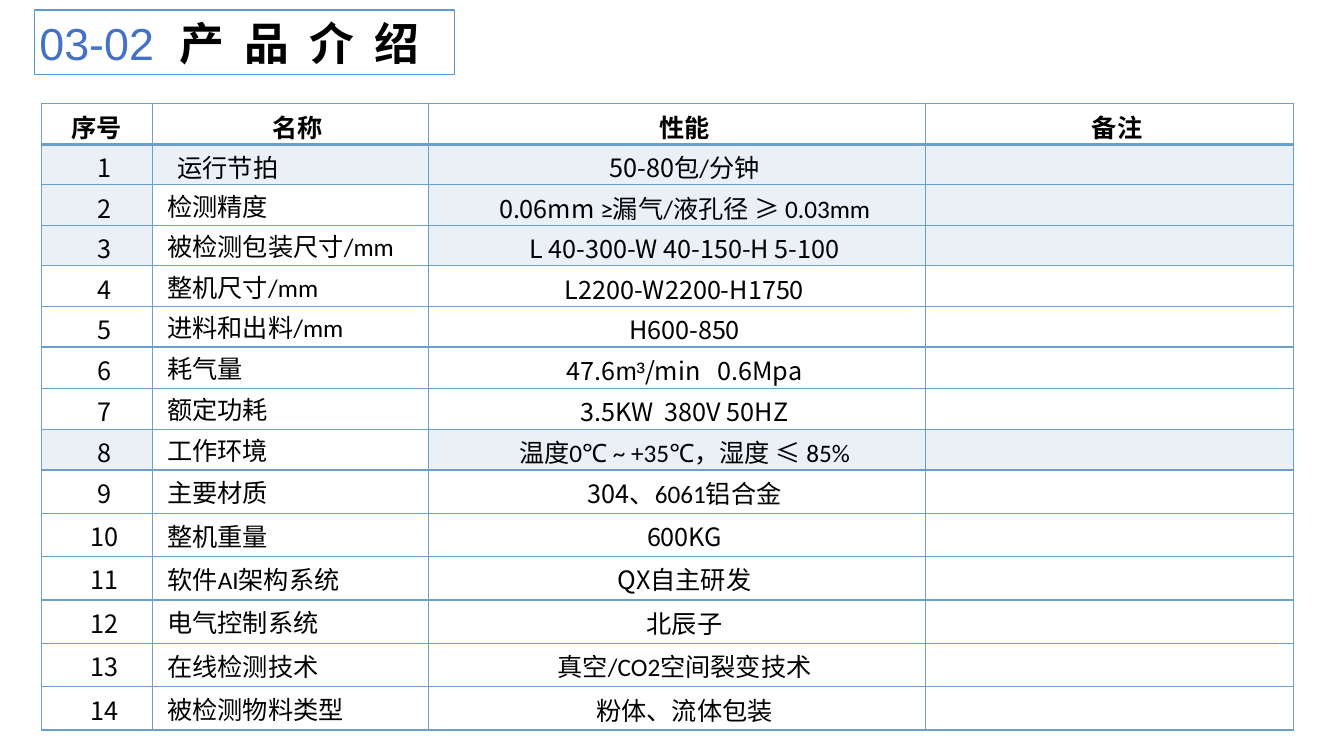
"""Build the product introduction slide with its specification table."""
from lxml import etree
from pptx import Presentation
from pptx import util as u
from pptx.dml import color
from pptx.enum import text
from pptx.oxml import ns

NOTO, CALIBRI, ARIAL = "Noto Sans CJK SC", "Calibri", "Arial"
HEADERS = ["序号", "名称", "性能", "备注"]
PRODUCT = [
    ("运行节拍", [("50-80", NOTO), ("包/分钟", CALIBRI)]),
    ("检测精度", [("0.06mm ", NOTO), ("≥漏气/液孔径 ≥ 0.03mm", CALIBRI)]),
    ("被检测包装尺寸/mm", [("L 40-300-W 40-150-H 5-100", NOTO)]),
    ("整机尺寸/mm", [("L2200-W2200-H1750", NOTO)]),
    ("进料和出料/mm", [("H600-850", NOTO)]),
    ("耗气量", [("47.6", NOTO), ("m³", ARIAL), ("/min", NOTO),
             (" ", NOTO, 8), ("0.6Mpa", NOTO)]),
    ("额定功耗", [("3.5KW", NOTO), (" ", NOTO, 4), ("380V 50HZ", NOTO)]),
    ("工作环境", [("温度0℃ ~ +35℃，湿度 ≤ 85%", CALIBRI)]),
    ("主要材质", [("304", NOTO), ("、6061铝合金", CALIBRI)]),
    ("整机重量", [("600KG", NOTO)]),
    ("软件AI架构系统", [("QX", NOTO), ("自主研发", CALIBRI)]),
    ("电气控制系统", [("北辰子", CALIBRI)]),
    ("在线检测技术", [("真空/CO2空间裂变技术", CALIBRI)]),
    ("被检测物料类型", [("粉体、流体包装", CALIBRI)]),
]
COLUMNS = [1.1, 2.74, 4.93, 3.65]
ROWS = [0.4] * 6 + [0.41] * 2 + [0.4] + [0.43] * 6
SHADED = {1, 2, 3, 8}


def rgb(value):
    return color.RGBColor.from_string(value)


def add_run(p, content, font=CALIBRI, spacing=0, size=18, ink="000000", bold=False):
    r = p.add_run()
    r.text = content
    r.font.name, r.font.size, r.font.bold = font, u.Pt(size), bold
    r.font.color.rgb = rgb(ink)
    rPr = r.font._element
    etree.SubElement(rPr, ns.qn("a:ea")).set("typeface", NOTO)
    if spacing:
        rPr.set("spc", str(round(spacing * 100)))


class ProductSlide:
    """Holds the colours and the slide being built."""
    line, table_line, shade, accent = "5B9BD5", "6B9FCB", "EBF0F6", "4472C4"

    def __init__(self, prs):
        self.s = prs.slides.add_slide(prs.slide_layouts[5])
        fill = self.s.background.fill
        fill.solid()
        fill.fore_color.rgb = rgb("FFFFFF")

    def title(self, number, heading):
        sp = self.s.shapes.title
        sp.left, sp.top, sp.width, sp.height = map(u.Inches, (0.34, 0.1, 4.17, 0.64))
        sp.fill.solid()
        sp.fill.fore_color.rgb = rgb("FFFFFF")
        sp.line.color.rgb = rgb(self.line)
        sp.line.width = u.Pt(1)
        tf = sp.text_frame
        tf.auto_size = text.MSO_AUTO_SIZE.NONE
        tf.word_wrap = True
        tf.vertical_anchor = text.MSO_ANCHOR.MIDDLE
        tf.margin_left = tf.margin_right = u.Inches(0.05)
        tf.margin_top = tf.margin_bottom = u.Inches(0.05)
        p = tf.paragraphs[0]
        p.alignment = text.PP_ALIGN.LEFT
        add_run(p, number, ARIAL, size=32, ink=self.accent)
        add_run(p, " ", ARIAL, 9, size=32, ink=self.accent)
        add_run(p, heading, NOTO, 3.6, size=32, bold=True)

    def border(self, cell, side, width):
        ln = etree.SubElement(cell._tc.get_or_add_tcPr(), ns.qn(f"a:ln{side}"),
                              w=str(u.Pt(width)))
        fill = etree.SubElement(ln, ns.qn("a:solidFill"))
        etree.SubElement(fill, ns.qn("a:srgbClr"), val=self.table_line)

    def cell(self, cell, runs, row, col):
        for side in "LRTB":
            thick = (row, side) in {(0, "B"), (1, "T")}
            self.border(cell, side, 2.25 if thick else 1)
        if row in SHADED and (col != 1 or row == 1):
            cell.fill.solid()
            cell.fill.fore_color.rgb = rgb(self.shade)
        else:
            cell.fill.background()
        name = col == 1 and row > 1
        cell.margin_left = cell.margin_right = u.Inches(0 if name else 0.1)
        cell.margin_top = u.Inches(0 if name else 0.04)
        cell.margin_bottom = 0
        cell.vertical_anchor = text.MSO_ANCHOR.MIDDLE if name else text.MSO_ANCHOR.TOP
        p = cell.text_frame.paragraphs[0]
        left = col == 1 and row > 0
        p.alignment = text.PP_ALIGN.LEFT if left else text.PP_ALIGN.CENTER
        if (row, col) != (0, 0):
            p._p.get_or_add_pPr().set("indent", str(u.Inches(0.15)))
        for item in runs:
            add_run(p, *item, bold=row == 0)

    def table(self, rows):
        frame = self.s.shapes.add_table(
            len(rows), len(COLUMNS), u.Inches(0.41), u.Inches(1.03),
            u.Inches(sum(COLUMNS)), u.Inches(sum(ROWS)))
        table = frame.table
        table.first_row = table.horz_banding = False
        for column, width in zip(table.columns, COLUMNS):
            column.width = u.Inches(width)
        for i, (row, height) in enumerate(zip(rows, ROWS)):
            table.rows[i].height = u.Inches(height)
            for j, runs in enumerate(row):
                self.cell(table.cell(i, j), runs, i, j)


def main():
    prs = Presentation()
    prs.slide_width, prs.slide_height = u.Inches(13.33), u.Inches(7.5)
    slide = ProductSlide(prs)
    slide.title("03-02", "产 品 介 绍")
    rows = [[[(header,)] for header in HEADERS]]
    for number, (name, performance) in enumerate(PRODUCT, 1):
        rows.append([[(str(number), NOTO)], [(name,)], performance, []])
    slide.table(rows)
    prs.save("out.pptx")


if __name__ == "__main__":
    main()
